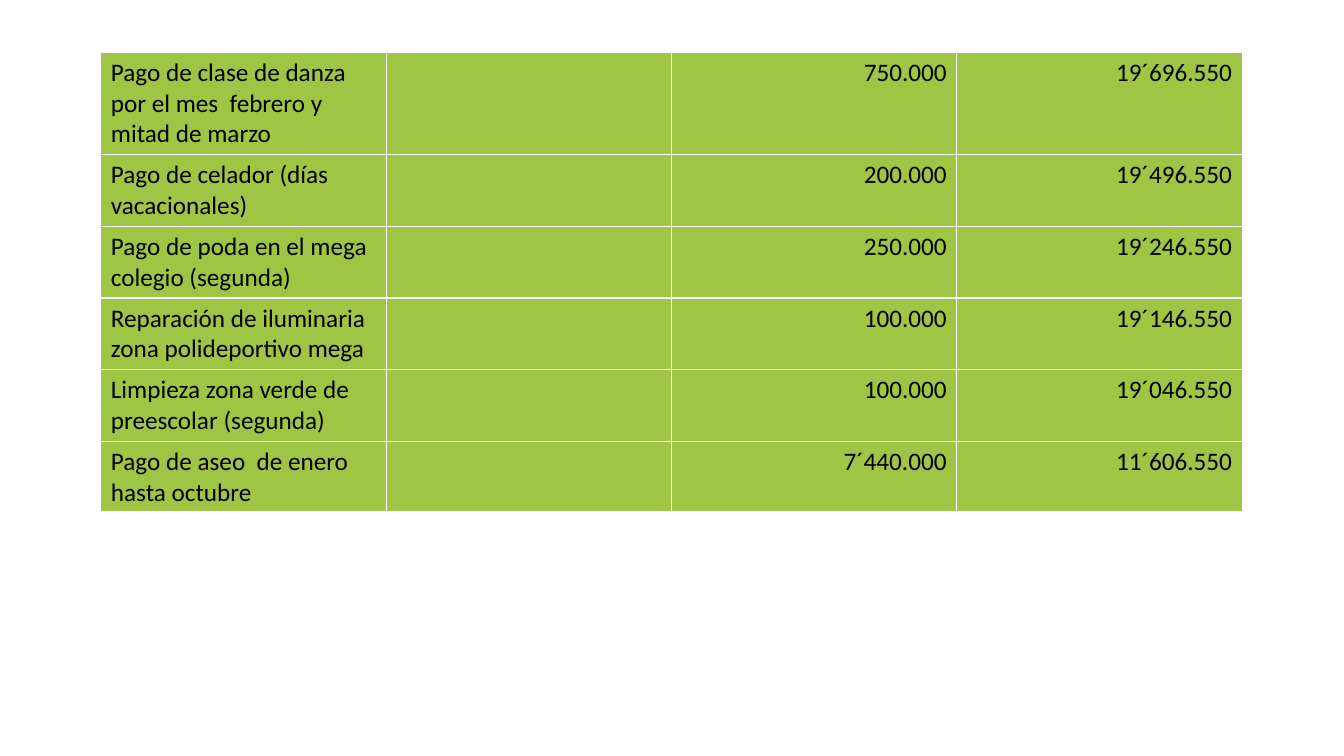
from dataclasses import dataclass

from lxml import etree
from pptx import Presentation
from pptx.dml.color import RGBColor
from pptx.enum.text import PP_ALIGN
from pptx.oxml.ns import qn
from pptx.table import Table, _Cell
from pptx.util import Inches, Pt

LEFT, RIGHT = PP_ALIGN.LEFT, PP_ALIGN.RIGHT
BLANK_LAYOUT = 6
GREEN, WHITE, BLACK = "9EC544", "FFFFFF", "000000"
COLUMN_WIDTH = 2.83
BORDER_TAGS = ("a:lnL", "a:lnR", "a:lnT", "a:lnB")


@dataclass(frozen=True)
class Payment:
    concept: str
    amount: str
    balance: str
    height: float = 0.7


PAYMENTS = [
    Payment("Pago de clase de danza por el mes  febrero y mitad de marzo",
            "750.000", "19´696.550", height=1.0),
    Payment("Pago de celador (días vacacionales)", "200.000", "19´496.550"),
    Payment("Pago de poda en el mega colegio (segunda)", "250.000", "19´246.550"),
    Payment("Reparación de iluminaria zona polideportivo mega",
            "100.000", "19´146.550"),
    Payment("Limpieza zona verde de preescolar (segunda)",
            "100.000", "19´046.550"),
    Payment("Pago de aseo  de enero hasta octubre", "7´440.000", "11´606.550"),
]


def color(value: str) -> RGBColor:
    return RGBColor.from_string(value)


def add_borders(cell: _Cell, bottom_width: float) -> None:
    properties = cell._tc.get_or_add_tcPr()
    for index, tag in enumerate(BORDER_TAGS):
        width = bottom_width if tag == "a:lnB" else 1
        line = etree.Element(qn(tag), w=str(Pt(width)))
        fill = etree.SubElement(line, qn("a:solidFill"))
        etree.SubElement(fill, qn("a:srgbClr"), val=WHITE)
        properties.insert(index, line)


def write_text(cell: _Cell, text: str, *, align: PP_ALIGN = LEFT,
               size: float = 18, font: str = "Calibri") -> None:
    para = cell.text_frame.paragraphs[0]
    para.alignment = align
    span = para.add_run()
    span.text = text
    span.font.size = Pt(size)
    span.font.name = font
    span.font.bold = False
    span.font.color.rgb = color(BLACK)


def fill_row(table: Table, index: int, payment: Payment) -> None:
    table.rows[index].height = Inches(payment.height)
    bottom_width = 3 if index == len(PAYMENTS) - 1 else 1
    texts = (payment.concept, "", payment.amount, payment.balance)
    for column, text in enumerate(texts):
        cell = table.cell(index, column)
        cell.fill.solid()
        cell.fill.fore_color.rgb = color(GREEN)
        add_borders(cell, bottom_width)
        if text:
            write_text(cell, text, align=RIGHT if column else LEFT)


def main() -> None:
    deck = Presentation()
    deck.slide_width, deck.slide_height = Inches(13.33), Inches(7.5)
    page = deck.slides.add_slide(deck.slide_layouts[BLANK_LAYOUT])
    height = sum(payment.height for payment in PAYMENTS)
    table = page.shapes.add_table(
        len(PAYMENTS), 4, Inches(1), Inches(0.52),
        Inches(4 * COLUMN_WIDTH), Inches(height)).table
    table.first_row = table.horz_banding = False
    for index, payment in enumerate(PAYMENTS):
        fill_row(table, index, payment)
    deck.save("out.pptx")


if __name__ == "__main__":
    main()
